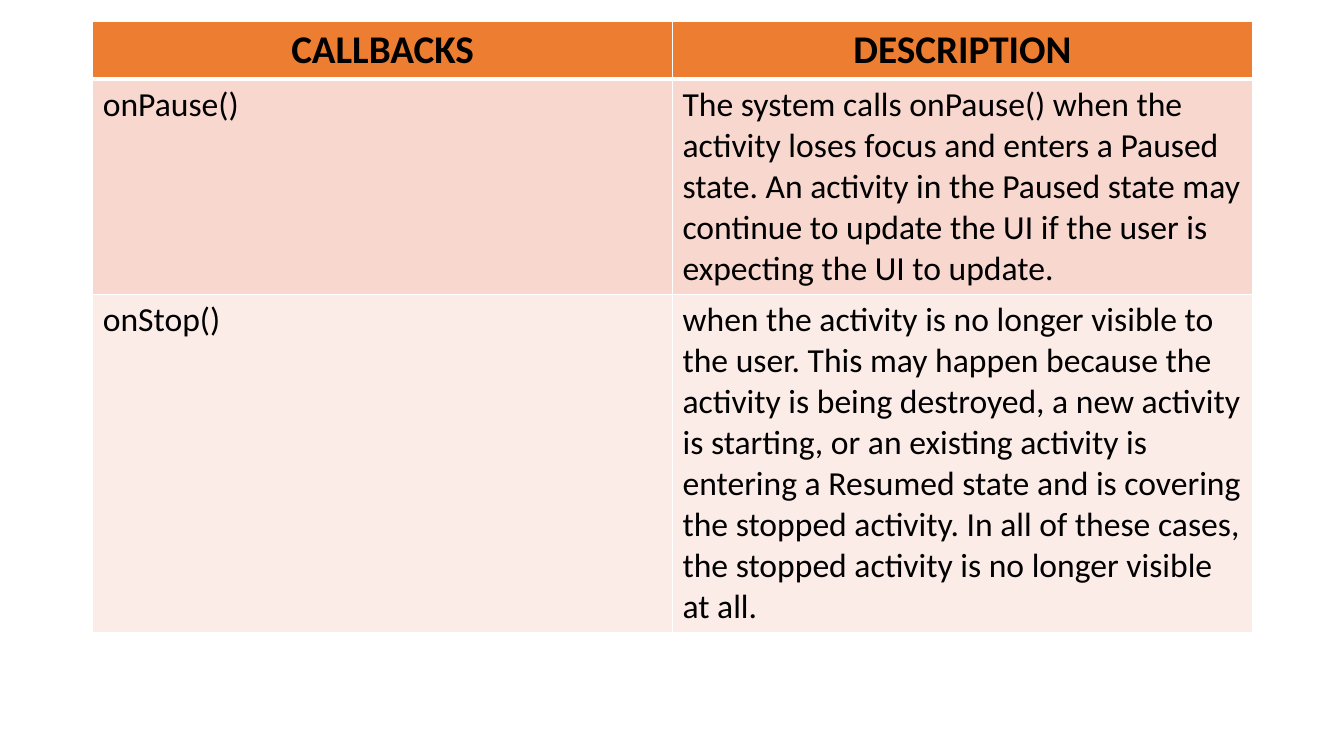
from dataclasses import dataclass

from lxml import etree
from pptx import Presentation
from pptx.dml.color import RGBColor
from pptx.enum.text import PP_ALIGN
from pptx.oxml.ns import qn
from pptx.util import Inches, Pt

CENTER, LEFT = PP_ALIGN.CENTER, PP_ALIGN.LEFT
BLANK_LAYOUT = 6


@dataclass(frozen=True)
class Theme:
    font: str = "Calibri"
    text: str = "000000"
    border: str = "FFFFFF"
    header_fill: str = "ED7D31"
    band_fills: tuple = ("F8D7CE", "FCECE8")
    header_size: int = 28
    body_size: int = 24
    thin: int = 1
    thick: int = 3


THEME = Theme()

CALLBACKS = [
    ("CALLBACKS", "DESCRIPTION"),
    ("onPause()",
     "The system calls onPause() when the activity loses focus and enters a "
     "Paused state. An activity in the Paused state may continue to update "
     "the UI if the user is expecting the UI to update."),
    ("onStop()",
     "when the activity is no longer visible to the user. This may happen "
     "because the activity is being destroyed, a new activity is starting, "
     "or an existing activity is entering a Resumed state and is covering "
     "the stopped activity. In all of these cases, the stopped activity is "
     "no longer visible at all."),
]
ROW_HEIGHTS = (0.56, 2.13, 3.36)


def set_borders(cell, widths):
    """Draw the cell's edges; widths maps each side to points."""
    properties = cell._tc.get_or_add_tcPr()
    for side in ("L", "R", "T", "B"):
        edge = etree.SubElement(properties, qn(f"a:ln{side}"),
                                w=str(Pt(widths[side])))
        fill = etree.SubElement(edge, qn("a:solidFill"))
        etree.SubElement(fill, qn("a:srgbClr"), val=THEME.border)


def format_cell(cell, words, row):
    is_header = row == 0
    # Borders come before the fill in the cell properties
    widths = dict.fromkeys("LRTB", THEME.thin)
    if is_header:
        widths["B"] = THEME.thick
    elif row == 1:
        widths["T"] = THEME.thick
    set_borders(cell, widths)

    bands = THEME.band_fills
    color = THEME.header_fill if is_header else bands[(row - 1) % len(bands)]
    cell.fill.solid()
    cell.fill.fore_color.rgb = RGBColor.from_string(color)

    # Text
    cell.text_frame.text = words
    paragraph = cell.text_frame.paragraphs[0]
    paragraph.alignment = CENTER if is_header else LEFT
    font = paragraph.runs[0].font
    font.name = THEME.font
    font.size = Pt(THEME.header_size if is_header else THEME.body_size)
    font.bold = is_header
    font.color.rgb = RGBColor.from_string(THEME.text)


def add_callback_table(slide, left, top, width):
    column_count = len(CALLBACKS[0])
    table = slide.shapes.add_table(
        len(CALLBACKS), column_count, Inches(left), Inches(top),
        Inches(width), Inches(sum(ROW_HEIGHTS))).table
    for column in table.columns:
        column.width = Inches(width / column_count)
    for row, (entry, height) in enumerate(zip(CALLBACKS, ROW_HEIGHTS)):
        table.rows[row].height = Inches(height)
        for column, words in enumerate(entry):
            format_cell(table.cell(row, column), words, row)


def main():
    deck = Presentation()
    deck.slide_width, deck.slide_height = Inches(13.33), Inches(7.5)
    slide = deck.slides.add_slide(deck.slide_layouts[BLANK_LAYOUT])
    add_callback_table(slide, left=0.92, top=0.21, width=11.5)
    deck.save("out.pptx")


if __name__ == "__main__":
    main()
